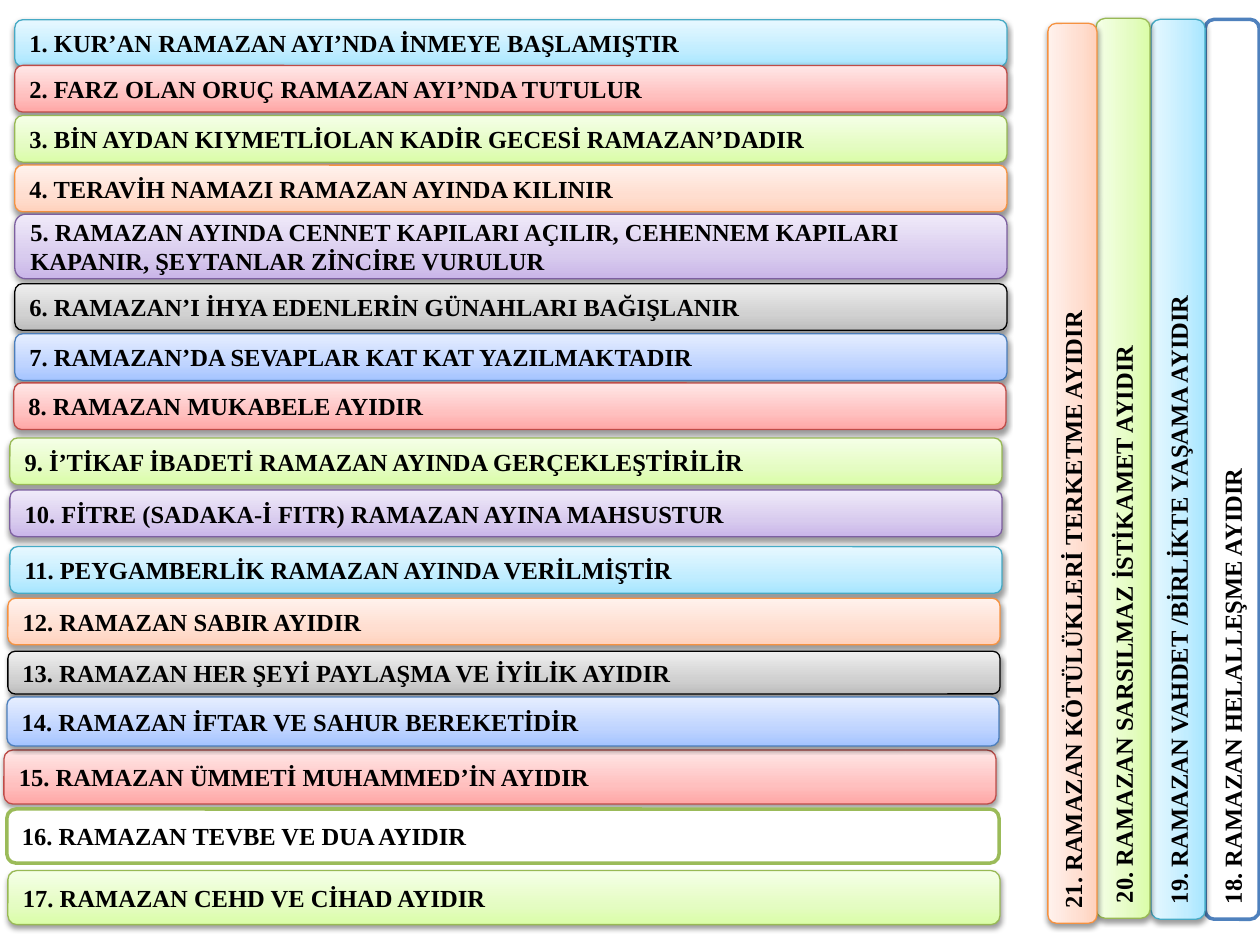
from copy import deepcopy
from dataclasses import dataclass

from lxml.etree import SubElement
from pptx import Presentation
from pptx.dml.color import RGBColor as Rgb
from pptx.enum.shapes import MSO_SHAPE as Kind
from pptx.enum.text import MSO_ANCHOR as Anchor, PP_ALIGN as Align
from pptx.oxml.ns import qn
from pptx.util import Cm, Pt


@dataclass(frozen=True)
class Paint:
    line: str
    stops: tuple[str, ...] = ()  # dark to light; none means a plain fill


@dataclass(frozen=True)
class Theme:
    font: str = "Times New Roman"
    size: float = 14
    ink: str = "000000"
    plain: str = "FFFFFF"
    thin: float = 0.75
    thick: float = 2
    aqua: Paint = Paint("46AAC5", ("A7E6FF", "C1EDFF", "E7F8FF"))
    red: Paint = Paint("BF4C48", ("FFA6A5", "FFC0BF", "FFE7E7"))
    green: Paint = Paint("98B955", ("DAFDA7", "E4FCC2", "F5FFE7"))
    peach: Paint = Paint("F69240", ("FFD2BD", "FFDED0", "FFF2ED"))
    violet: Paint = Paint("7D60A0", ("C9B5E8", "D8CBEE", "F0EAF9"))
    grey: Paint = Paint("000000", ("BDBDBD", "D1D1D1", "EEEEEE"))
    blue: Paint = Paint("4B7EBC", ("A4C4FF", "BFD4FF", "E6EEFF"))
    leaf: Paint = Paint("9BBB59")
    navy: Paint = Paint("4F81BD")


@dataclass(frozen=True)
class Bar:
    text: str
    paint: Paint
    left: float
    top: float
    high: float = 0.94
    wide: float = 20
    turn: int = 0


T = Theme()


def post(text: str, paint: Paint, mid_x: float, mid_y: float,
         high: float = 1.09) -> Bar:
    """An upright bar, given by its centre."""
    wide = 18.14
    return Bar(text, paint, mid_x - wide / 2, mid_y - high / 2, high, wide, 270)


# Lengths in cm, from back to front
ROWS = [
    Bar("1. KUR’AN RAMAZAN AYI’NDA İNMEYE BAŞLAMIŞTIR", T.aqua, 0.3, 0.4),
    Bar("2. FARZ OLAN ORUÇ RAMAZAN AYI’NDA TUTULUR", T.red, 0.3, 1.32),
    Bar("3. BİN AYDAN KIYMETLİOLAN KADİR GECESİ RAMAZAN’DADIR", T.green, 0.3, 2.33),
    Bar("4. TERAVİH NAMAZI RAMAZAN AYINDA KILINIR", T.peach, 0.3, 3.33),
    Bar("5. RAMAZAN AYINDA CENNET KAPILARI AÇILIR, CEHENNEM KAPILARI "
        "KAPANIR, ŞEYTANLAR ZİNCİRE VURULUR", T.violet, 0.3, 4.32, 1.3),
    Bar("6. RAMAZAN’I İHYA EDENLERİN GÜNAHLARI BAĞIŞLANIR", T.grey, 0.3, 5.72),
    Bar("7. RAMAZAN’DA SEVAPLAR KAT KAT YAZILMAKTADIR", T.blue, 0.3, 6.73),
    Bar("8. RAMAZAN MUKABELE AYIDIR", T.red, 0.28, 7.72),
    Bar("9. İ’TİKAF İBADETİ RAMAZAN AYINDA GERÇEKLEŞTİRİLİR", T.green, 0.2, 8.83),
    Bar("10. FİTRE (SADAKA-İ FITR) RAMAZAN AYINA MAHSUSTUR", T.violet, 0.2, 9.88),
    Bar("11. PEYGAMBERLİK RAMAZAN AYINDA VERİLMİŞTİR", T.aqua, 0.2, 11.02),
    Bar("12. RAMAZAN SABIR AYIDIR", T.peach, 0.16, 12.06),
    Bar("13. RAMAZAN HER ŞEYİ PAYLAŞMA VE İYİLİK AYIDIR", T.grey, 0.16, 13.13, 0.86),
    Bar("15. RAMAZAN ÜMMETİ MUHAMMED’İN AYIDIR", T.red, 0.08, 15.12, 1.09),
    Bar("14. RAMAZAN İFTAR VE SAHUR BEREKETİDİR", T.blue, 0.14, 14.05, 0.99),
    Bar("16. RAMAZAN TEVBE VE DUA AYIDIR", T.leaf, 0.14, 16.31, 1.09),
    Bar("17. RAMAZAN CEHD VE CİHAD AYIDIR", T.green, 0.16, 17.55, 1.09),
]
POSTS = [
    post("18. RAMAZAN HELALLEŞME AYIDIR", T.navy, 24.84, 9.46),
    post("19. RAMAZAN VAHDET /BİRLİKTE YAŞAMA AYIDIR", T.aqua, 23.75, 9.46),
    post("20. RAMAZAN SARSILMAZ İSTİKAMET AYIDIR", T.green, 22.64, 9.44),
    post("21. RAMAZAN KÖTÜLÜKLERİ TERKETME AYIDIR", T.peach, 21.62, 9.54, 0.99),
]


def blend(shape, hues: tuple[str, ...]) -> None:
    """Fill with three stops, running from bottom to top."""
    fill = shape.fill
    fill.gradient()
    fill.gradient_angle = 90
    stops = shape._element.spPr.find(".//" + qn("a:gsLst"))
    stops.insert(1, deepcopy(stops[0]))
    for stop, hue, spot in zip(fill.gradient_stops, hues, (0, 0.35, 1)):
        stop.color.rgb = Rgb.from_string(hue)
        stop.position = spot


def shade(shape) -> None:
    """Drop a soft shadow straight down."""
    group = shape._element.spPr.find(qn("a:effectLst"))
    drop = SubElement(group, qn("a:outerShdw"), blurRad=str(Pt(3.15)),
                      dist=str(Pt(1.57)), dir="5400000", rotWithShape="0")
    hue = SubElement(drop, qn("a:srgbClr"), val=T.ink)
    SubElement(hue, qn("a:alpha"), val="38000")


def draw(slide, bar: Bar) -> None:
    shape = slide.shapes.add_shape(
        Kind.ROUNDED_RECTANGLE,
        Cm(bar.left), Cm(bar.top), Cm(bar.wide), Cm(bar.high))
    shape.rotation = bar.turn
    shape.shadow.inherit = False
    shape.line.color.rgb = Rgb.from_string(bar.paint.line)
    if bar.paint.stops:
        shape.line.width = Pt(T.thin)
        blend(shape, bar.paint.stops)
        shade(shape)
    else:
        shape.line.width = Pt(T.thick)
        shape.fill.solid()
        shape.fill.fore_color.rgb = Rgb.from_string(T.plain)

    # Label
    frame = shape.text_frame
    frame.word_wrap = True
    frame.vertical_anchor = Anchor.MIDDLE
    para = frame.paragraphs[0]
    para.alignment = Align.LEFT
    run = para.add_run()
    run.text = bar.text
    font = run.font
    font.name, font.size, font.bold = T.font, Pt(T.size), True
    font.color.rgb = Rgb.from_string(T.ink)


def main() -> None:
    deck = Presentation()
    deck.slide_width, deck.slide_height = Cm(25.4), Cm(19.05)
    slide = deck.slides.add_slide(deck.slide_layouts[6])
    for bar in ROWS + POSTS:
        draw(slide, bar)
    deck.save("out.pptx")


if __name__ == "__main__":
    main()
